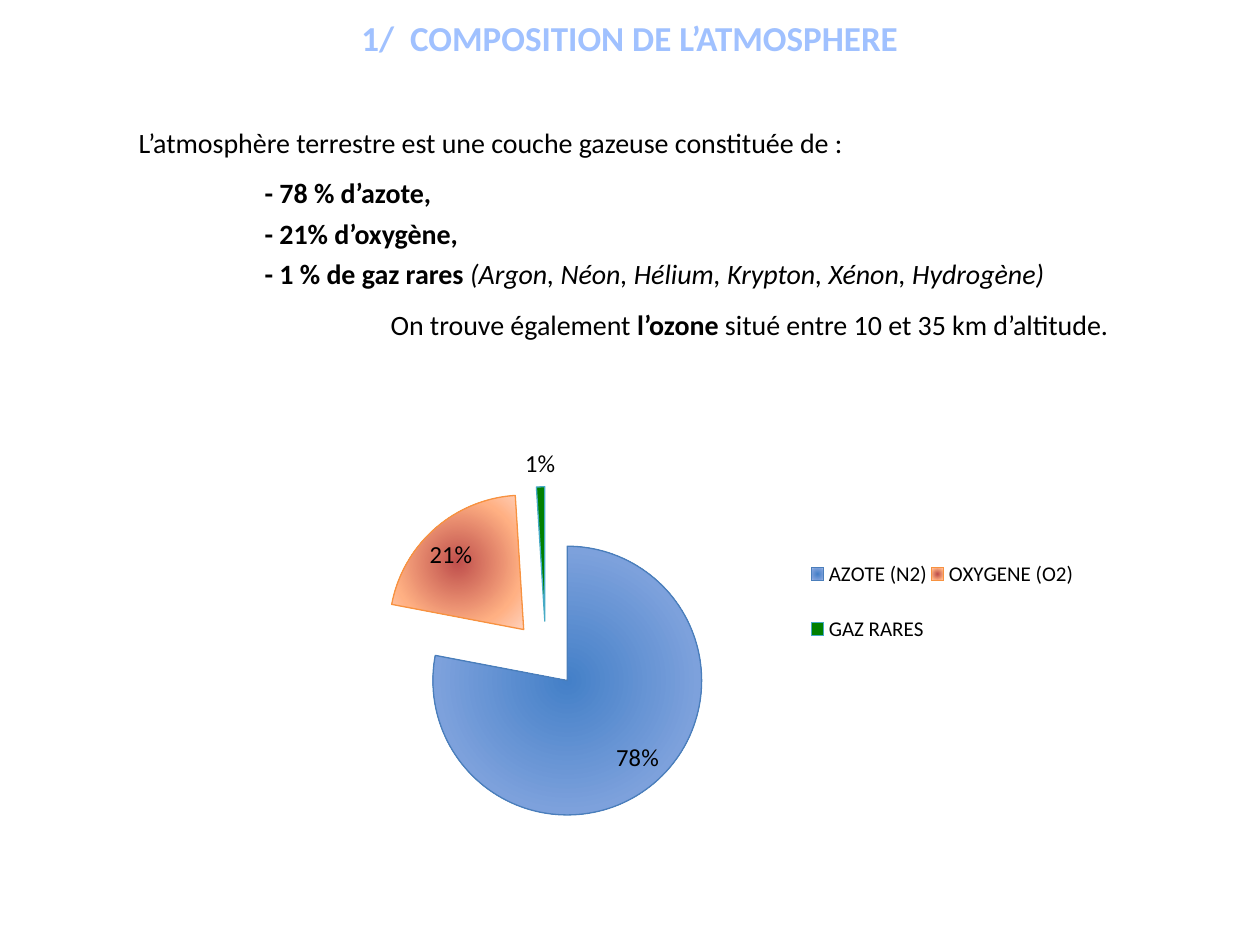
from pptx import Presentation
from pptx.chart.data import CategoryChartData
from pptx.dml.color import RGBColor
from pptx.enum.chart import XL_CHART_TYPE as ChartType
from pptx.enum.chart import XL_LABEL_POSITION as LabelPosition
from pptx.enum.chart import XL_LEGEND_POSITION as LegendPosition
from pptx.enum.text import MSO_ANCHOR as Anchor
from pptx.enum.text import MSO_AUTO_SIZE as AutoSize
from pptx.enum.text import PP_ALIGN as Align
from pptx.oxml import parse_xml
from pptx.oxml.ns import nsdecls
from pptx.util import Cm, Pt

TITLE_STOPS = [(0, "BFD3F9"), (9, "A0C1FF"), (50, "003D85"), (79, "A0C1FF"), (100, "BFD3F9")]
GASES = [
    ("AZOTE (N2)", 78, [(0, "4480C8"), (69, "7DA1DC"), (100, "BACAE9")], "4A7EBB"),
    ("OXYGENE (O2)", 21, [(0, "C0504D"), (69, "FFB083"), (100, "FFD2BD")], "F79240"),
    ("GAZ RARES", 1, "008000", "46AAC5"),
]
LINEAR = '<a:lin ang="5400000" scaled="0"/>'
RADIAL = '<a:path path="circle"><a:fillToRect l="50000" t="50000" r="50000" b="50000"/></a:path>'

PLAIN, BOLD, ITALIC = {}, {"bold": True}, {"italic": True}
COMPOSITION = [
    (2.54, {"space_after": Pt(6)},
     [("L’atmosphère terrestre est une couche gazeuse constituée de :", PLAIN)]),
    (5.08, {},
     [("- 78 % d’azote,\n- 21% d’oxygène,\n- 1 % de gaz rares ", BOLD),
      ("(Argon, Néon, Hélium, Krypton, Xénon, Hydrogène)", ITALIC)]),
    (7.62, {"space_before": Pt(6)},
     [("On trouve également ", PLAIN), ("l’ozone", BOLD),
      (" situé entre 10 et 35 km d’altitude.", PLAIN)]),
]


def color(value):
    return RGBColor.from_string(value)


def apply(target, values):
    for name, value in values.items():
        setattr(target, name, value)


def replace_solid_with_gradient(host, stops, shade):
    solid = host.xpath(".//a:solidFill")[0]
    marks = "".join(
        f'<a:gs pos="{place * 1000}"><a:srgbClr val="{value}"/></a:gs>' for place, value in stops)
    solid.getparent().replace(solid, parse_xml(
        f'<a:gradFill {nsdecls("a")}><a:gsLst>{marks}</a:gsLst>{shade}</a:gradFill>'))


def manual_layout(inner, **fractions):
    target = '<c:layoutTarget val="inner"/>' if inner else ""
    modes = '<c:xMode val="edge"/><c:yMode val="edge"/>'
    sizes = "".join(f'<c:{side} val="{value}"/>' for side, value in fractions.items())
    return parse_xml(f'<c:layout {nsdecls("c")}><c:manualLayout>{target}{modes}{sizes}'
                     "</c:manualLayout></c:layout>")


class AtmosphereSlide:
    """Holds the text style and the slide being built."""

    font_name = "Calibri"
    ink = "000000"

    def __init__(self, deck):
        self.slide = deck.slides.add_slide(deck.slide_layouts[1])

    def style(self, font, size, **extra):
        apply(font, {"name": self.font_name, "size": Pt(size), **extra})
        font.color.rgb = color(self.ink)

    def place(self, holder, left, top, width, height):
        apply(holder, {"left": Cm(left), "top": Cm(top), "width": Cm(width), "height": Cm(height)})

    def title(self, wording, *box):
        holder = self.slide.shapes.title
        self.place(holder, *box)
        apply(holder.text_frame, {"vertical_anchor": Anchor.MIDDLE, "auto_size": AutoSize.NONE})
        heading = holder.text_frame.paragraphs[0]
        apply(heading, {"alignment": Align.CENTER, "space_after": Pt(12)})
        run = heading.add_run()
        run.text = wording
        self.style(run.font, 20, bold=True)
        properties = run.font._element
        replace_solid_with_gradient(properties, TITLE_STOPS, LINEAR)
        properties.insert(0, parse_xml(
            f'<a:ln {nsdecls("a")} w="10541"><a:solidFill><a:srgbClr val="467AB8"/>'
            "</a:solidFill></a:ln>"))

    def body(self, passages, *box):
        holder = self.slide.placeholders[1]
        self.place(holder, *box)
        frame = holder.text_frame
        apply(frame, {"auto_size": AutoSize.SHAPE_TO_FIT_TEXT, "vertical_anchor": Anchor.TOP})
        for number, (indent, spacing, pieces) in enumerate(passages):
            paragraph = frame.add_paragraph() if number else frame.paragraphs[0]
            apply(paragraph, {"line_spacing": 1.2, "space_before": Pt(0),
                              "space_after": Pt(0), **spacing})
            properties = paragraph._p.get_or_add_pPr()
            properties.set("marL", str(Cm(indent)))
            properties.set("indent", "0")
            properties.append(parse_xml(f'<a:buNone {nsdecls("a")}/>'))
            for wording, emphasis in pieces:
                for row, line in enumerate(wording.split("\n")):
                    if row:
                        paragraph.add_line_break()
                    run = paragraph.add_run()
                    run.text = line
                    self.style(run.font, 16, **emphasis)

    def pie(self, gases, *box):
        data = CategoryChartData(number_format="0")
        data.categories = [gas[0] for gas in gases]
        data.add_series("Series 1", [gas[1] for gas in gases])
        chart = self.slide.shapes.add_chart(ChartType.PIE, *map(Cm, box), data).chart
        chart.has_title = False
        self.style(chart.font, 18)
        plot = chart.plots[0]
        plot.vary_by_categories = True
        self.slices(plot.series[0], gases)
        self.labels(plot)
        self.legend(chart)
        area = chart.element.xpath(".//c:plotArea")[0]
        for default in area.xpath("c:layout"):
            area.remove(default)
        area.insert(0, manual_layout(True, x=0.22, y=0.13, w=0.38, h=0.82))

    def slices(self, series, gases):
        for number, (_, _, paint, edge) in enumerate(gases):
            look = series.points[number].format
            look.fill.solid()
            look.fill.fore_color.rgb = color(paint if isinstance(paint, str) else self.ink)
            look.line.color.rgb = color(edge)
            look.line.width = Pt(0.75)
            if not isinstance(paint, str):
                point = series._element.xpath("c:dPt")[number]
                replace_solid_with_gradient(point, paint, RADIAL)
        series._element.xpath("c:dPt")[0].addprevious(
            parse_xml(f'<c:explosion {nsdecls("c")} val="25"/>'))

    def labels(self, plot):
        plot.has_data_labels = True
        apply(plot.data_labels, {"show_percentage": True, "show_value": False,
                                 "number_format": "0%", "number_format_is_linked": False,
                                 "position": LabelPosition.BEST_FIT})
        self.style(plot.data_labels.font, 14)

    def legend(self, chart):
        chart.has_legend = True
        apply(chart.legend, {"position": LegendPosition.RIGHT, "include_in_layout": False})
        self.style(chart.legend.font, 12)
        chart.element.xpath(".//c:legendPos")[0].addnext(
            manual_layout(False, x=0.7, y=0.24, w=0.3, h=0.34))


def main():
    deck = Presentation()
    apply(deck, {"slide_width": Cm(25.4), "slide_height": Cm(19.05)})
    page = AtmosphereSlide(deck)
    page.pie(GASES, 3.56, 8.74, 18.16, 8.26)
    page.title("1/  COMPOSITION DE L’ATMOSPHERE", 0, 0.08, 25.4, 1.37)
    page.body(COMPOSITION, 0, 2.26, 25.4, 4.78)
    deck.save("out.pptx")


if __name__ == "__main__":
    main()
